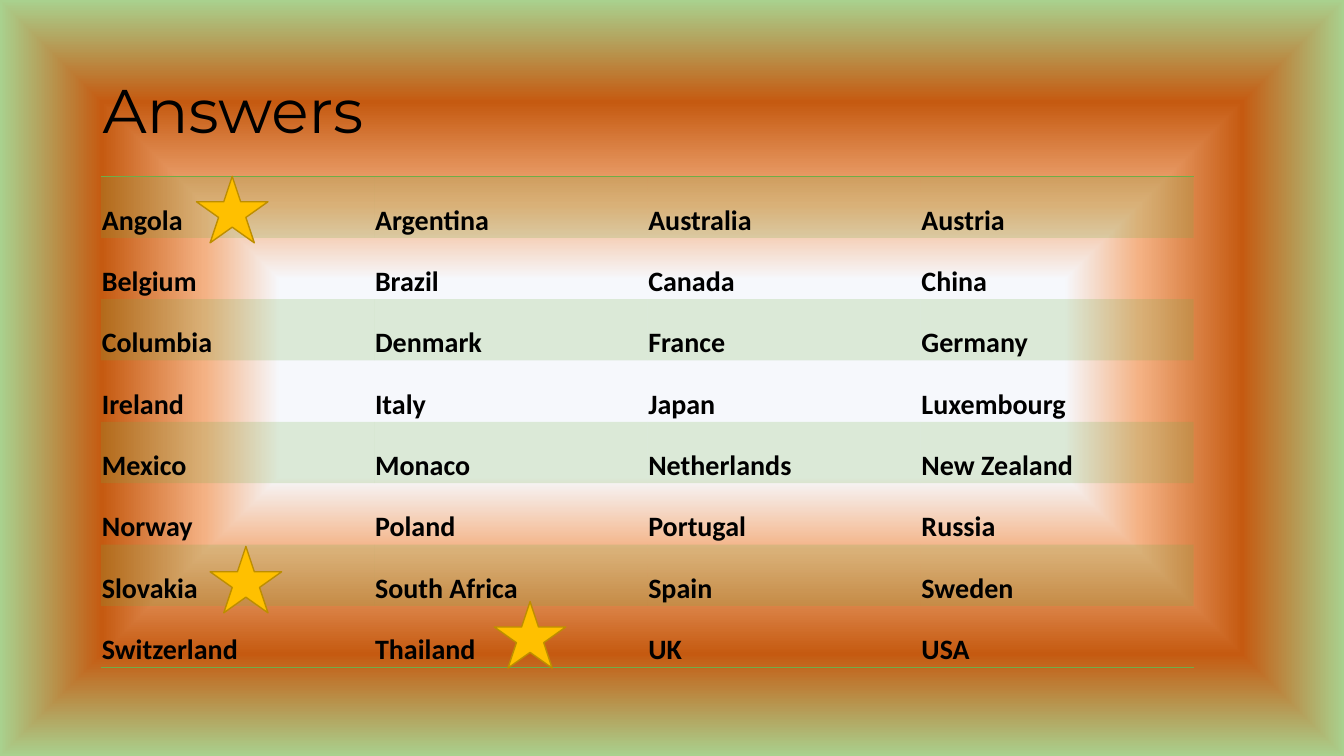
import pptx
import pptx.util
import pptx.oxml
import pptx.oxml.ns
import pptx.dml.color
import pptx.enum.shapes
import pptx.enum.text

RGBColor = pptx.dml.color.RGBColor
Inches = pptx.util.Inches
Pt = pptx.util.Pt
qn = pptx.oxml.ns.qn
MIDDLE = pptx.enum.text.MSO_ANCHOR.MIDDLE
BOTTOM = pptx.enum.text.MSO_ANCHOR.BOTTOM

# Content
TITLE = "Answers"
COUNTRIES = [
    ("Angola", "Argentina", "Australia", "Austria"),
    ("Belgium", "Brazil", "Canada", "China"),
    ("Columbia", "Denmark", "France", "Germany"),
    ("Ireland", "Italy", "Japan", "Luxembourg"),
    ("Mexico", "Monaco", "Netherlands", "New Zealand"),
    ("Norway", "Poland", "Portugal", "Russia"),
    ("Slovakia", "South Africa", "Spain", "Sweden"),
    ("Switzerland", "Thailand", "UK", "USA"),
]
# Star corners, in table columns and rows
STARS = [(0.35, 0), (1.44, 6.93), (0.4, 6.03)]

# Colours and formats
BLACK = RGBColor(0x00, 0x00, 0x00)
GREEN = RGBColor(0x70, 0xAD, 0x47)
GOLD = RGBColor(0xFF, 0xC0, 0x00)
DARK_GOLD = RGBColor(0xBD, 0x8E, 0x00)
GLOW = [
    (26, RGBColor(0xF6, 0xF8, 0xFC)),
    (46, RGBColor(0xF4, 0xB1, 0x83)),
    (73, RGBColor(0xC5, 0x5A, 0x11)),
    (100, RGBColor(0xA9, 0xD1, 0x8E)),
]
TITLE_FONT = {"name": "Montserrat", "size": Pt(44), "bold": False}
CELL_FONT = {"name": "Calibri", "size": Pt(20), "bold": True}
CELL_FORMAT = {
    "vertical_anchor": BOTTOM,
    "margin_left": Inches(0.01),
    "margin_right": Inches(0.01),
    "margin_top": Inches(0.01),
    "margin_bottom": 0,
}
PLAIN_STYLE = "{2D5ABB26-0587-4C30-8999-92F81FD0307C}"

# Grid, in inches
TABLE_LEFT, TABLE_TOP = 1, 1.75
COLUMN, ROW = 2.71, 4.87 / len(COUNTRIES)
STAR_WIDTH, STAR_HEIGHT = 0.71, 0.66


def apply(target, values):
    for name, value in values.items():
        setattr(target, name, value)


def write(frame, text, font):
    span = frame.paragraphs[0].add_run()
    span.text = text
    apply(span.font, font)
    span.font.color.rgb = BLACK


def xml(tag, inner, attributes=""):
    namespace = pptx.oxml.ns.nsdecls("a")
    return pptx.oxml.parse_xml(f"<a:{tag} {namespace} {attributes}>{inner}</a:{tag}>")


def paint_background(page):
    page.background.fill.solid()
    stops = "".join(
        f'<a:gs pos="{share * 1000}"><a:srgbClr val="{colour}"/></a:gs>'
        for share, colour in GLOW
    )
    centre = '<a:fillToRect l="50000" t="50000" r="50000" b="50000"/>'
    gradient = xml(
        "gradFill",
        f'<a:gsLst>{stops}</a:gsLst><a:path path="shape">{centre}</a:path>',
        'rotWithShape="1"',
    )
    solid = page.element.find(".//" + qn("p:bgPr")).find(qn("a:solidFill"))
    solid.getparent().replace(solid, gradient)


def add_title(page):
    box = page.shapes.add_textbox(Inches(0.92), Inches(0.4), Inches(11.5), Inches(1.45))
    apply(box.text_frame, {"word_wrap": True, "vertical_anchor": MIDDLE})
    box.text_frame.paragraphs[0].line_spacing = 0.9
    write(box.text_frame, TITLE, TITLE_FONT)


def format_cell(cell, row):
    apply(cell, CELL_FORMAT)
    properties = cell._tc.get_or_add_tcPr()
    # Pale green bands on every other row
    if row % 2 == 0:
        cell.fill.solid()
        cell.fill.fore_color.rgb = GREEN
        properties.find(".//" + qn("a:srgbClr")).append(xml("alpha", "", 'val="20000"'))
    else:
        cell.fill.background()
    # Rules above the first row and below the last
    edge = {0: "lnT", len(COUNTRIES) - 1: "lnB"}.get(row)
    if edge:
        colour = f'<a:solidFill><a:srgbClr val="{GREEN}"/></a:solidFill>'
        properties.insert(0, xml(edge, colour, f'w="{Pt(1)}"'))


def add_countries(page):
    columns = len(COUNTRIES[0])
    frame = page.shapes.add_table(
        len(COUNTRIES), columns, Inches(TABLE_LEFT), Inches(TABLE_TOP),
        Inches(COLUMN * columns), Inches(ROW * len(COUNTRIES)),
    )
    table = frame.table
    apply(table, {"first_row": False, "horz_banding": False})
    frame.element.find(".//" + qn("a:tableStyleId")).text = PLAIN_STYLE
    for row, names in enumerate(COUNTRIES):
        for column, name in enumerate(names):
            cell = table.cell(row, column)
            format_cell(cell, row)
            write(cell.text_frame, name, CELL_FONT)


def add_stars(page):
    for column, row in STARS:
        star = page.shapes.add_shape(
            pptx.enum.shapes.MSO_SHAPE.STAR_5_POINT,
            Inches(TABLE_LEFT + column * COLUMN), Inches(TABLE_TOP + row * ROW),
            Inches(STAR_WIDTH), Inches(STAR_HEIGHT),
        )
        star.shadow.inherit = False
        star.fill.solid()
        star.fill.fore_color.rgb = GOLD
        star.line.color.rgb = DARK_GOLD
        star.line.width = Pt(1)


def main():
    deck = pptx.Presentation()
    apply(deck, {"slide_width": Inches(13.33), "slide_height": Inches(7.5)})
    page = deck.slides.add_slide(deck.slide_layouts[6])
    paint_background(page)
    add_title(page)
    add_countries(page)
    add_stars(page)
    deck.save("out.pptx")


if __name__ == "__main__":
    main()
